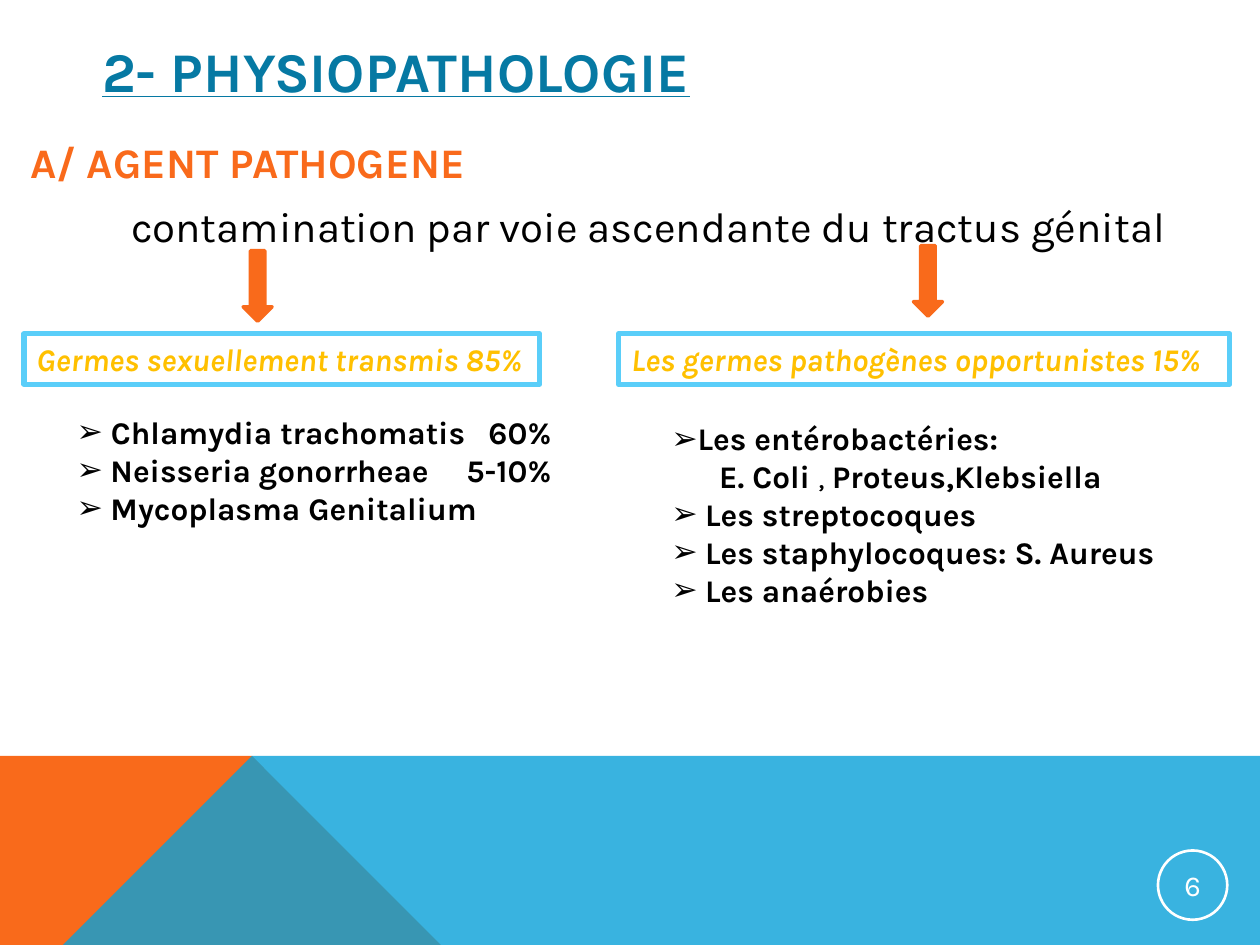
from dataclasses import dataclass

from pptx import Presentation
from pptx.dml.color import RGBColor
from pptx.enum.shapes import MSO_SHAPE
from pptx.enum.text import MSO_ANCHOR, MSO_AUTO_SIZE, PP_ALIGN
from pptx.oxml.ns import qn
from pptx.util import Inches, Pt
from lxml import etree

DOWN_ARROW, OVAL, RECTANGLE = MSO_SHAPE.DOWN_ARROW, MSO_SHAPE.OVAL, MSO_SHAPE.RECTANGLE
LEFT, CENTER = PP_ALIGN.LEFT, PP_ALIGN.CENTER
TOP, MIDDLE = MSO_ANCHOR.TOP, MSO_ANCHOR.MIDDLE
NO_FIT, GROW = MSO_AUTO_SIZE.NONE, MSO_AUTO_SIZE.SHAPE_TO_FIT_TEXT


@dataclass(frozen=True)
class Theme:
    font: str = "Karla"
    bullet: str = "➢"
    title: str = "0679A3"
    accent: str = "F96A1B"
    band: str = "08A1D9"
    frame: str = "5ACEF9"
    heading: str = "FFC000"
    text: str = "000000"
    light: str = "FFFFFF"
    title_size: float = 32
    body_size: float = 24
    list_size: float = 18
    number_size: float = 16.5


@dataclass(frozen=True)
class Run:
    text: str
    bold: bool = True


@dataclass(frozen=True)
class Item:
    runs: tuple[Run, ...]
    bulleted: bool = True
    indent: float = 0
    tab: float = 0


@dataclass(frozen=True)
class GermGroup:
    heading: str
    frame: tuple[float, float, float, float]
    arrow: tuple[float, float]
    items_box: tuple[float, float, float, float]
    items: tuple[Item, ...]


THEME = Theme()
SPACE = Run(" ", False)
GROUPS = (
    GermGroup(
        "Germes sexuellement transmis 85%",
        (0.19, 2.65, 4.09, 0.4), (1.93, 1.99), (0.51, 3.23, 5, 1.01),
        (
            Item((Run(" Chlamydia trachomatis\t60%"),), tab=3.77),
            Item((SPACE, Run("Neisseria gonorrheae\t5-10%")), tab=3.77),
            Item((SPACE, Run("Mycoplasma Genitalium"))),
        ),
    ),
    GermGroup(
        "Les germes pathogènes opportunistes 15%",
        (4.91, 2.65, 4.85, 0.4), (7.25, 1.95), (5.23, 3.28, 5, 1.62),
        (
            Item((Run("Les entérobactéries:"),)),
            Item((Run("E. Coli "), Run(", ", False), Run("Proteus,Klebsiella")),
                 bulleted=False, indent=0.38),
            Item((SPACE, Run("Les streptocoques"))),
            Item((SPACE, Run("Les staphylocoques: S. Aureus"))),
            Item((SPACE, Run("Les anaérobies"))),
        ),
    ),
)


def rgb(color: str) -> RGBColor:
    return RGBColor.from_string(color)


def add_run(paragraph, text: str, size: float, color: str, bold=False, italic=False, underline=False):
    run = paragraph.add_run()
    run.text = text
    font = run.font
    font.name, font.size = THEME.font, Pt(size)
    font.bold, font.italic, font.underline = bold, italic, underline
    font.color.rgb = rgb(color)


def format_paragraph(paragraph, margin=0.0, hanging=0.0, bulleted=False, tab=0.0):
    properties = paragraph._p.get_or_add_pPr()
    properties.set("marL", str(Inches(margin)))
    properties.set("indent", str(Inches(-hanging)))
    if bulleted:
        etree.SubElement(properties, qn("a:buFont"), typeface="Arial")
        etree.SubElement(properties, qn("a:buChar"), char=THEME.bullet)
    else:
        etree.SubElement(properties, qn("a:buNone"))
    if tab:
        tabs = etree.SubElement(properties, qn("a:tabLst"))
        etree.SubElement(tabs, qn("a:tab"), pos=str(Inches(tab)), algn="r")


def place(shape, left: float, top: float, width: float, height: float):
    shape.left, shape.top = Inches(left), Inches(top)
    shape.width, shape.height = Inches(width), Inches(height)


def add_band(slide, points: list[tuple[float, float]], color: str, opacity: int):
    builder = slide.shapes.build_freeform(*points[0], scale=Inches(1))
    builder.add_line_segments(points[1:], close=True)
    band = builder.convert_to_shape()
    band.shadow.inherit = False
    band.fill.solid()
    band.fill.fore_color.rgb = rgb(color)
    band.line.fill.background()
    if opacity < 100:
        fill_color = band.element.spPr.find(qn("a:solidFill"))[0]
        etree.SubElement(fill_color, qn("a:alpha"), val=str(opacity * 1000))
    slide.shapes.title.element.addprevious(band.element)


def add_outline(slide, preset, box: tuple[float, float, float, float], color: str, weight: float):
    outline = slide.shapes.add_shape(preset, *map(Inches, box))
    outline.shadow.inherit = False
    outline.fill.background()
    outline.line.color.rgb = rgb(color)
    outline.line.width = Pt(weight)
    return outline


def add_group(slide, group: GermGroup):
    arrow = add_outline(slide, DOWN_ARROW, (*group.arrow, 0.23, 0.56), THEME.accent, 2)
    arrow.fill.solid()
    arrow.fill.fore_color.rgb = rgb(THEME.accent)

    heading = add_outline(slide, RECTANGLE, group.frame, THEME.frame, 3).text_frame
    heading.word_wrap, heading.auto_size = True, GROW
    heading.vertical_anchor = TOP
    heading.paragraphs[0].alignment = LEFT
    add_run(heading.paragraphs[0], group.heading, THEME.list_size, THEME.heading, True, True)

    germs = slide.shapes.add_textbox(*map(Inches, group.items_box)).text_frame
    germs.word_wrap, germs.auto_size = True, GROW
    for index, item in enumerate(group.items):
        paragraph = germs.add_paragraph() if index else germs.paragraphs[0]
        format_paragraph(paragraph, item.indent, bulleted=item.bulleted, tab=item.tab)
        for run in item.runs:
            add_run(paragraph, run.text, THEME.list_size, THEME.text, run.bold)


def main():
    presentation = Presentation()
    presentation.slide_width, presentation.slide_height = Inches(10), Inches(7.5)
    slide = presentation.slides.add_slide(presentation.slide_layouts[1])

    add_band(slide, [(0, 7.5), (0, 5.52), (2.23, 5.52), (3.91, 7.5)], THEME.accent, 100)
    add_band(slide, [(0, 7.5), (2.23, 5.52), (10, 5.52), (10, 7.5)], THEME.band, 80)

    title = slide.shapes.title
    place(title, 0.71, 0.26, 8.22, 0.6)
    title.text_frame.auto_size = NO_FIT
    title.text_frame.vertical_anchor = MIDDLE
    title_line = title.text_frame.paragraphs[0]
    title_line.alignment = LEFT
    add_run(title_line, "2- PHYSIOPATHOLOGIE", THEME.title_size, THEME.title, True, underline=True)

    body = slide.placeholders[1]
    place(body, 0.14, 1.03, 9.86, 3.91)
    body.text_frame.auto_size = NO_FIT
    subtitle = body.text_frame.paragraphs[0]
    format_paragraph(subtitle, 0.38, 0.38)
    subtitle.space_before = Pt(0)
    add_run(subtitle, "A/ AGENT PATHOGENE", THEME.body_size, THEME.accent, True)
    route = body.text_frame.add_paragraph()
    format_paragraph(route, 0.8)
    route.space_before = Pt(8)
    add_run(route, "contamination par voie ascendante du tractus génital", THEME.body_size, THEME.text)

    badge = add_outline(slide, OVAL, (9.19, 6.75, 0.55, 0.55), THEME.light, 1.5).text_frame
    badge.margin_left = badge.margin_right = badge.margin_top = badge.margin_bottom = Inches(0.01)
    badge.vertical_anchor = MIDDLE
    badge.paragraphs[0].alignment = CENTER
    add_run(badge.paragraphs[0], "6", THEME.number_size, THEME.light)

    for group in GROUPS:
        add_group(slide, group)

    presentation.save("out.pptx")


if __name__ == "__main__":
    main()
